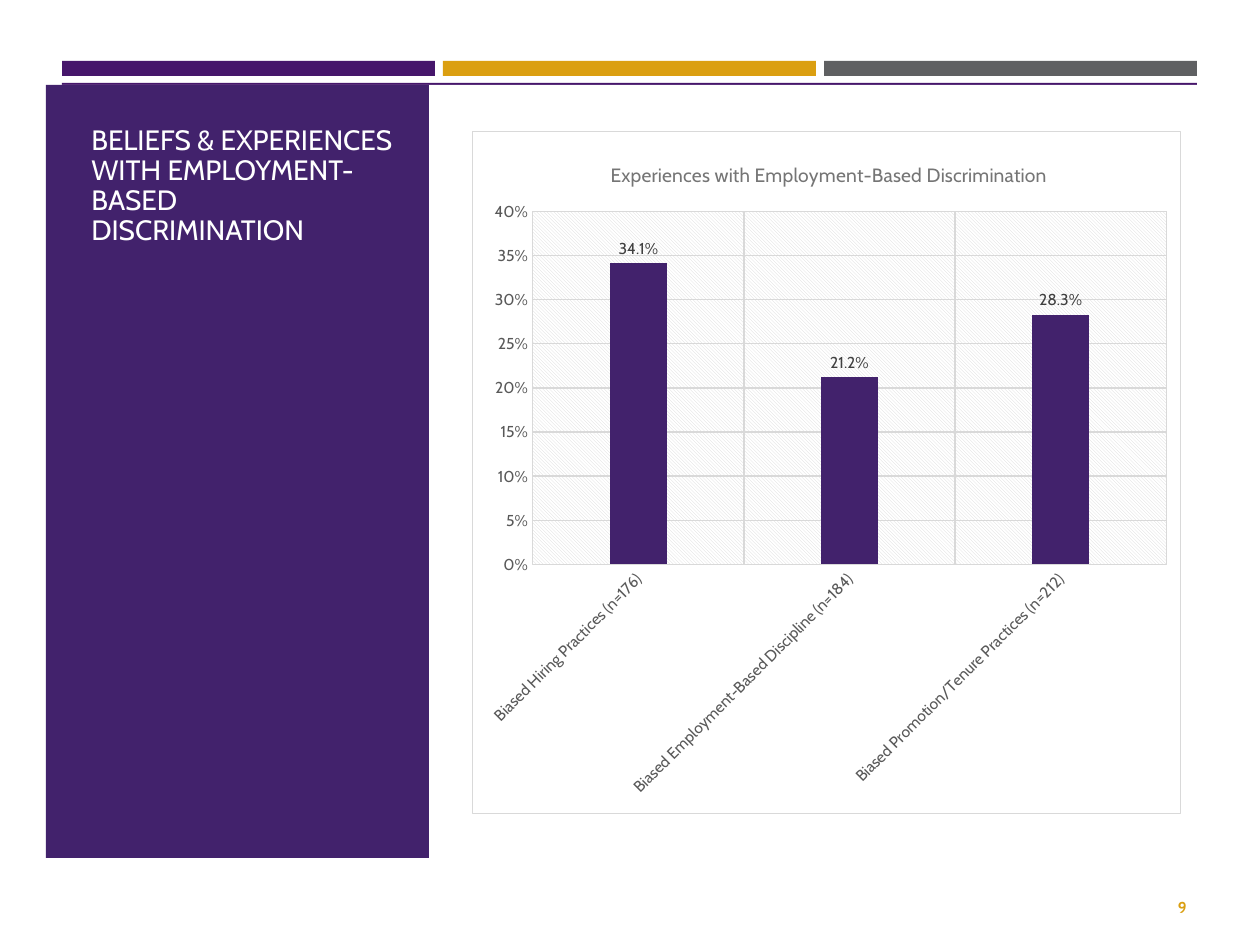
from dataclasses import dataclass

from pptx import Presentation, util as u
from pptx.chart.data import CategoryChartData
from pptx.dml.color import RGBColor
from pptx.enum import chart as ch, shapes, text
from pptx.oxml import parse_xml
from pptx.oxml.ns import nsdecls


@dataclass(frozen=True)
class Theme:
    """Colours, font and type sizes of the slide."""
    violet: str = "46166B"
    purple: str = "42226C"
    gold: str = "DB9F11"
    amber: str = "DA9F11"
    slate: str = "5F6062"
    white: str = "FFFFFF"
    black: str = "000000"
    rule: str = "D9D9D9"
    label: str = "595959"
    value: str = "404040"
    head: str = "757575"
    font: str = "Cabin"
    title: int = 16
    chart: int = 11
    base: int = 10
    small: int = 9


T = Theme()


def px(*vals):
    """Turn pixels at 126 to the inch into EMU."""
    return [u.Emu(round(v * 914400 / 126)) for v in vals]


def style(font, size, color, bold=False):
    """Set the face, size, colour and weight of a font."""
    font.name, font.size, font.bold = T.font, u.Pt(size), bold
    font.color.rgb = RGBColor.from_string(color)


def line(fmt):
    """Draw a thin grey chart line."""
    fmt.line.color.rgb = RGBColor.from_string(T.rule)
    fmt.line.width = u.Pt(0.75)


def block(slide, box, color):
    """Add a plain filled rectangle."""
    shape = slide.shapes.add_shape(shapes.MSO_SHAPE.RECTANGLE, *px(*box))
    shape.shadow.inherit = False
    shape.fill.solid()
    shape.fill.fore_color.rgb = RGBColor.from_string(color)
    shape.line.fill.background()


def write(slide, box, words, size, color, anchor, align, bold=False):
    """Add a wrapped text box and return its paragraph."""
    frame = slide.shapes.add_textbox(*px(*box)).text_frame
    frame.word_wrap, frame.vertical_anchor = True, anchor
    para = frame.paragraphs[0]
    para.alignment = align
    run = para.add_run()
    run.text = words
    style(run.font, size, color, bold)
    return para


def find(chart, route):
    """Return the first chart element on a route."""
    return chart._chartSpace.xpath(route)[0]


def place(node, spot, inner=False):
    """Give a chart part a manual layout in shares of the chart."""
    for old in node.xpath("c:layout"):
        node.remove(old)
    target = '<c:layoutTarget val="inner"/>' if inner else ""
    modes = "".join(f'<c:{k}Mode val="edge"/>' for k in "xy")
    sizes = "".join(f'<c:{k} val="{v}"/>' for k, v in zip("xywh", spot))
    layout = parse_xml(
        f'<c:layout {nsdecls("c")}><c:manualLayout>{target}{modes}{sizes}'
        '</c:manualLayout></c:layout>')
    node.insert(1 if node.xpath("c:tx") else 0, layout)


def paint(chart):
    """Fill the chart and hatch its plot area, both with a grey border."""
    def props(fill):
        return parse_xml(
            f'<c:spPr {nsdecls("c", "a")}>{fill}<a:ln w="9525"><a:solidFill>'
            f'<a:srgbClr val="{T.rule}"/></a:solidFill></a:ln></c:spPr>')

    white = f'<a:srgbClr val="{T.white}"/>'
    hatch = (f'<a:pattFill prst="ltDnDiag"><a:fgClr><a:srgbClr val="{T.rule}"/>'
             f'</a:fgClr><a:bgClr>{white}</a:bgClr></a:pattFill>')
    find(chart, "c:chart").addnext(props(f"<a:solidFill>{white}</a:solidFill>"))
    plot = find(chart, "c:chart/c:plotArea")
    plot.append(props(hatch))
    place(plot, (0.085, 0.117, 0.895, 0.518), inner=True)


def axes(chart):
    """Style the two axes and their gridlines."""
    cat, val = chart.category_axis, chart.value_axis
    for axis in (cat, val):
        axis.has_major_gridlines = True
        line(axis.major_gridlines.format)
        axis.major_tick_mark = axis.minor_tick_mark = ch.XL_TICK_MARK.NONE
        style(axis.tick_labels.font, T.small, T.label)
    line(cat.format)
    find(chart, ".//c:catAx/c:txPr/a:bodyPr").set("rot", "-2700000")
    val.format.line.fill.background()
    val.minimum_scale, val.maximum_scale, val.major_unit = 0, 0.4, 0.05
    val.tick_labels.number_format = "0%"
    val.tick_labels.number_format_is_linked = False


def bars(slide, box, head, rows):
    """Add the column chart with its title and value labels."""
    data = CategoryChartData(number_format="0.0%")
    data.categories = list(rows)
    data.add_series("Series 1", list(rows.values()))
    kind = ch.XL_CHART_TYPE.COLUMN_CLUSTERED
    chart = slide.shapes.add_chart(kind, *px(*box), data).chart
    style(chart.font, T.base, T.black)
    chart.has_legend, chart.has_title = False, True
    run = chart.chart_title.text_frame.paragraphs[0].add_run()
    run.text = head
    style(run.font, T.chart, T.head)
    place(find(chart, "c:chart/c:title"), (0.19, 0.04))
    plot = chart.plots[0]
    plot.gap_width, plot.overlap, plot.vary_by_categories = 267, -43, False
    fill = plot.series[0].format.fill
    fill.solid()
    fill.fore_color.rgb = RGBColor.from_string(T.purple)
    plot.has_data_labels = True
    tags = plot.data_labels
    tags.show_value, tags.position = True, ch.XL_LABEL_POSITION.OUTSIDE_END
    tags.number_format, tags.number_format_is_linked = "0.0%", False
    style(tags.font, T.small, T.value)
    axes(chart)
    paint(chart)


def main():
    """Build the slide and save it."""
    deck = Presentation()
    deck.slide_width, deck.slide_height = px(1260, 945)
    slide = deck.slides.add_slide(deck.slide_layouts[6])
    for i, color in enumerate((T.violet, T.gold, T.slate)):
        block(slide, (62 + 381 * i, 61, 373, 15), color)
    block(slide, (62, 83, 1135, 123), T.violet)
    block(slide, (0, 85, 1260, 860), T.white)
    block(slide, (46, 85, 383, 773), T.purple)
    block(slide, (439, 86, 775, 772), T.white)
    title = write(slide, (79, 113, 328, 140),
                  "BELIEFS & EXPERIENCES WITH EMPLOYMENT-BASED DISCRIMINATION",
                  T.title, T.white, text.MSO_ANCHOR.BOTTOM, text.PP_ALIGN.LEFT)
    title.line_spacing = 0.9
    write(slide, (1091, 882, 108, 50), "9", T.small, T.amber,
          text.MSO_ANCHOR.MIDDLE, text.PP_ALIGN.RIGHT, True)
    bars(slide, (472, 131, 709, 683),
         "Experiences with Employment-Based Discrimination",
         {"Biased Hiring Practices (n=176)": 0.341,
          "Biased Employment-Based Discipline (n=184)": 0.212,
          "Biased Promotion/Tenure Practices (n=212)": 0.283})
    deck.save("out.pptx")


if __name__ == "__main__":
    main()
